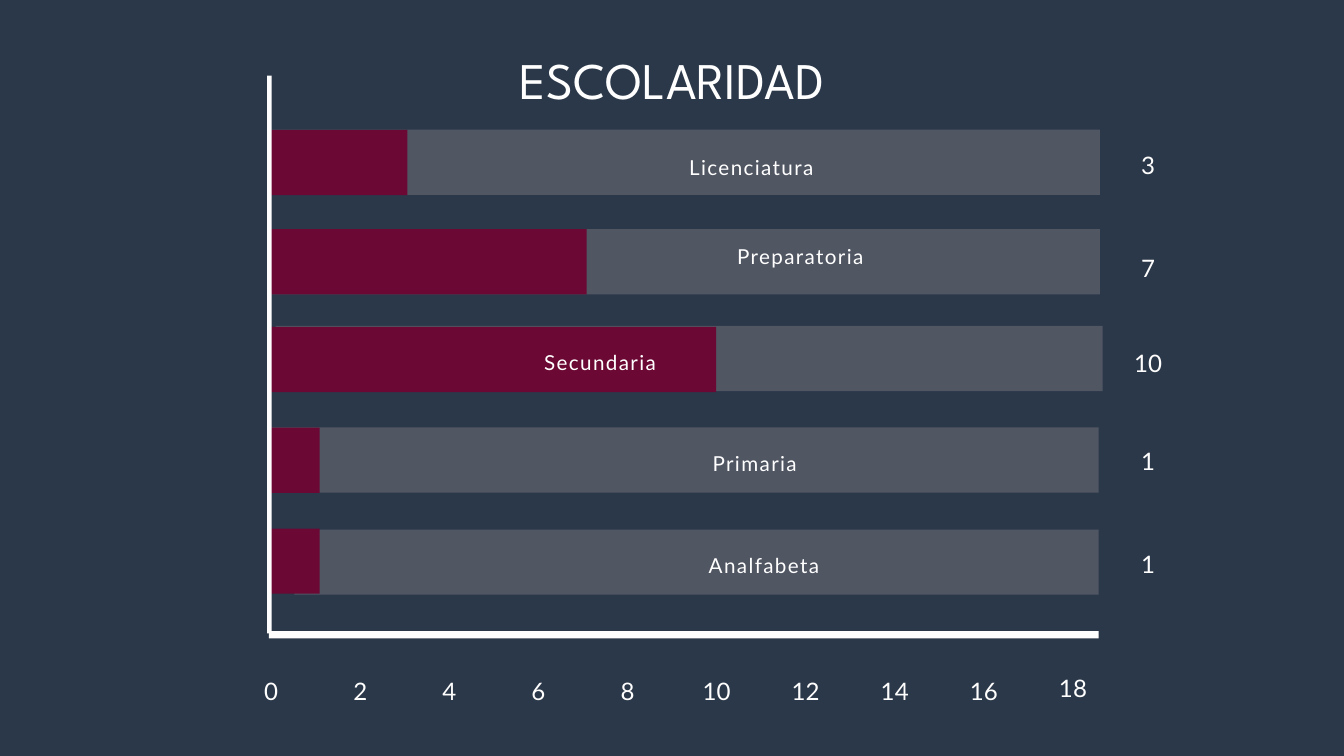
import dataclasses

import pptx
import pptx.dml.color
import pptx.enum.shapes
import pptx.enum.text
import pptx.oxml
import pptx.oxml.ns
import pptx.util

Pt = pptx.util.Pt
ALIGN = pptx.enum.text.PP_ALIGN

COLORS = {
    "background": "2B3849",
    "track": "D3BABD",
    "bar": "6B0834",
    "axis": "FFFEFE",
    "text": "FFFFFF",
}


@dataclasses.dataclass(frozen=True)
class TextStyle:
    font: str
    size: float
    leading: float
    color: str
    spacing: float = 0  # letter spacing


@dataclasses.dataclass(frozen=True)
class Row:
    label: str
    value: int
    track_left: float
    track_top: float
    track_right: float
    bar_top: float
    bar_width: float
    label_left: float
    label_top: float
    value_top: float
    align: ALIGN = ALIGN.CENTER


TITLE = TextStyle("League Spartan", 55, 77, "text")
LABEL = TextStyle("Lato", 22.1, 36.9, "text", 1.5)
NUMBER = TextStyle("Lato", 25.8, 39.5, "axis", 0.2)

ROWS = [
    Row("Licenciatura ", 3, 289.4, 139, 1178.6, 139.3, 148.5, 643, 155.5, 152.6),
    Row("Preparatoria", 7, 288, 245.5, 1178.6, 245.5, 340.6, 789.8, 251.3, 262.8,
        ALIGN.LEFT),
    Row("Secundaria ", 10, 295.2, 349.2, 1181.5, 350.3, 479.2, 481, 364.3, 365),
    Row("Primaria", 1, 288, 457.9, 1177.2, 458.3, 54.5, 643, 472.3, 469.4),
    Row("Analfabeta ", 1, 315.4, 567.4, 1177.2, 566.3, 54.5, 656.6, 581.8, 580.3),
]
BAR_LEFT, BAR_HEIGHT = 288, 69.84
LABEL_WIDTH, LABEL_HEIGHT = 331.2, 33.8
NUMBER_WIDTH, NUMBER_HEIGHT = 58.3, 36.7
VALUE_LEFT = 1201
TICK_LEFT, TICK_STEP = 261.4, 95.45
TICK_TOP, LAST_TICK_TOP = 715.7, 713.5


def rgb(name: str) -> pptx.dml.color.RGBColor:
    return pptx.dml.color.RGBColor.from_string(COLORS[name])


def add_rect(slide, left: float, top: float, width: float, height: float,
             color: str, opacity: int = 100) -> None:
    sp = slide.shapes.add_shape(pptx.enum.shapes.MSO_SHAPE.RECTANGLE,
                                Pt(left), Pt(top), Pt(width), Pt(height))
    sp.shadow.inherit = False
    sp.line.fill.background()
    sp.fill.solid()
    sp.fill.fore_color.rgb = rgb(color)
    if opacity < 100:
        clr = sp.fill._xPr.find(".//" + pptx.oxml.ns.qn("a:srgbClr"))
        alpha = pptx.oxml.parse_xml(
            f'<a:alpha {pptx.oxml.ns.nsdecls("a")} val="{opacity * 1000}"/>')
        clr.append(alpha)


def add_text(slide, text: str, left: float, top: float, width: float,
             height: float, style: TextStyle, align: ALIGN = ALIGN.CENTER) -> None:
    tf = slide.shapes.add_textbox(Pt(left), Pt(top), Pt(width), Pt(height)).text_frame
    tf.word_wrap = True
    tf.margin_left = tf.margin_right = tf.margin_top = tf.margin_bottom = 0
    p = tf.paragraphs[0]
    p.alignment = align
    p.line_spacing = Pt(style.leading)
    p.font.name = style.font
    p.font.size = Pt(style.size)
    p.font.color.rgb = rgb(style.color)
    r = p.add_run()
    r.text = text
    if style.spacing:
        r._r.get_or_add_rPr().set("spc", str(round(style.spacing * 100)))


def main() -> None:
    prs = pptx.Presentation()
    prs.slide_width, prs.slide_height = Pt(1440), Pt(810)
    slide = prs.slides.add_slide(prs.slide_layouts[6])
    slide.background.fill.solid()
    slide.background.fill.fore_color.rgb = rgb("background")

    # Title
    add_text(slide, "ESCOLARIDAD", 179.3, 41, 1081.4, 72.7, TITLE)

    # Tracks and value bars
    for row in ROWS:
        add_rect(slide, row.track_left, row.track_top,
                 row.track_right - row.track_left, BAR_HEIGHT, "track", 23)
        add_rect(slide, BAR_LEFT, row.bar_top, row.bar_width, BAR_HEIGHT, "bar")

    # Axes
    add_rect(slide, 286.2, 81, 5, 597.6, "axis")
    add_rect(slide, 288, 676.1, 889.2, 7.9, "axis")

    # Category labels and values
    for row in ROWS:
        add_text(slide, row.label, row.label_left, row.label_top,
                 LABEL_WIDTH, LABEL_HEIGHT, LABEL, row.align)
        add_text(slide, str(row.value), VALUE_LEFT, row.value_top,
                 NUMBER_WIDTH, NUMBER_HEIGHT, NUMBER)

    # Scale numbers
    for i, tick in enumerate(range(0, 20, 2)):
        top = LAST_TICK_TOP if tick == 18 else TICK_TOP
        add_text(slide, str(tick), TICK_LEFT + i * TICK_STEP, top,
                 NUMBER_WIDTH, NUMBER_HEIGHT, NUMBER)

    prs.save("out.pptx")


if __name__ == "__main__":
    main()
